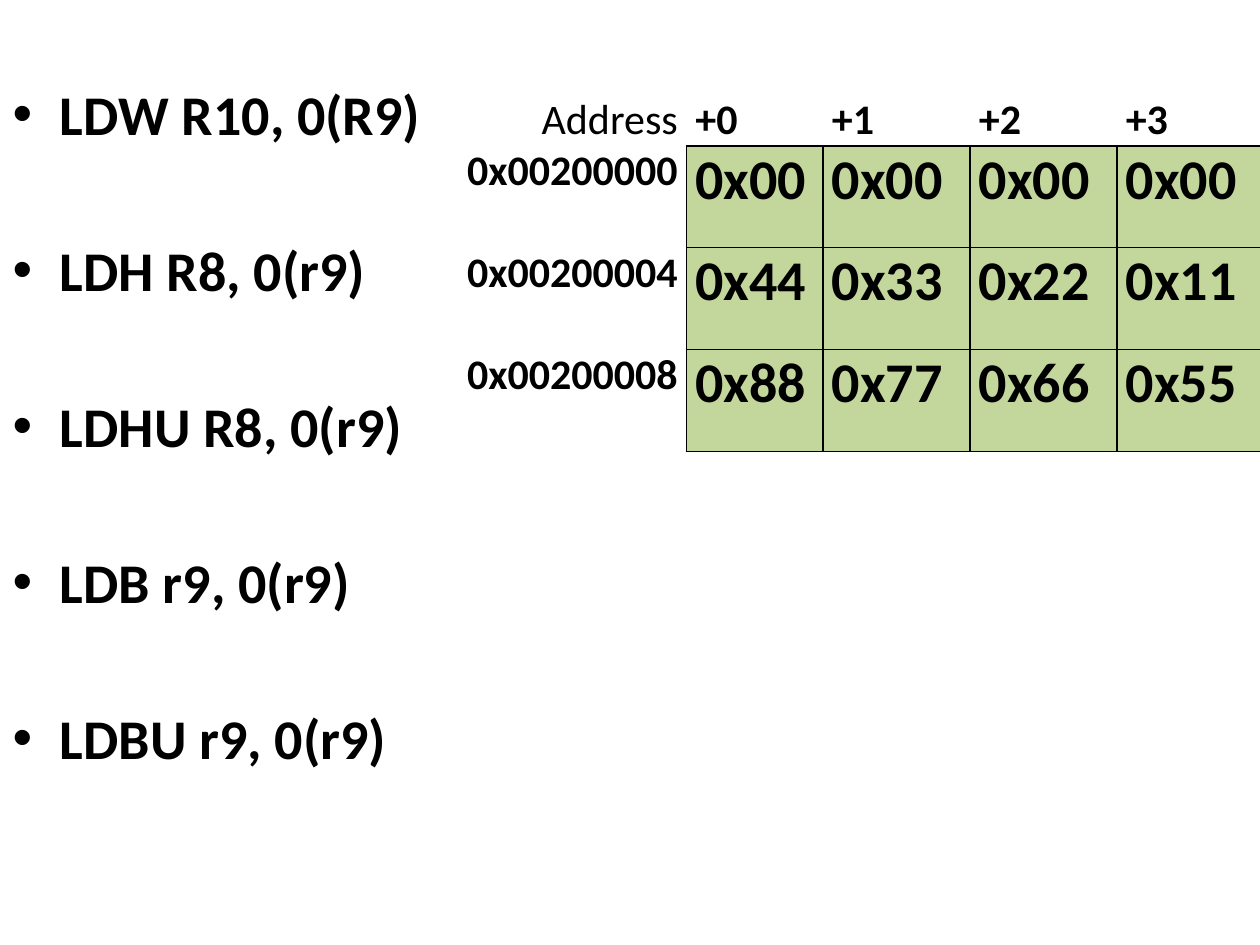
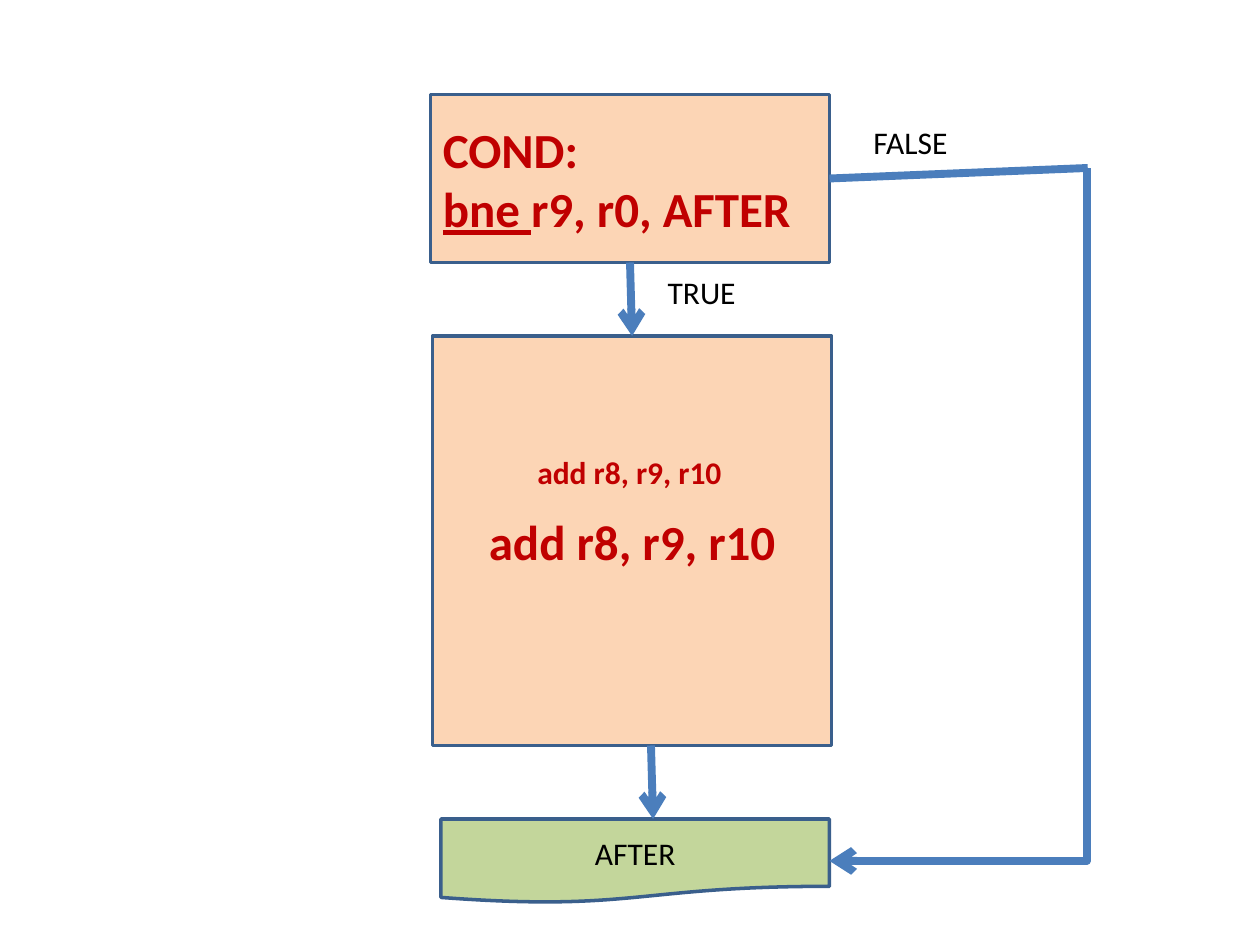
from lxml.etree import SubElement as Sub
from pptx import Presentation
from pptx.dml.color import RGBColor
from pptx.enum.shapes import MSO_CONNECTOR as Link, MSO_SHAPE as Form
from pptx.enum.text import MSO_ANCHOR as Anchor, MSO_AUTO_SIZE as Fit, PP_ALIGN as Align
from pptx.oxml.ns import qn
from pptx.util import Emu, Inches, Pt

COLS, ROWS = 120, 90
BLACK, RED, PEACH, GREEN = "000000", "C00000", "FCD5B5", "C3D69B"
EDGE, BLUE = "3A5F8C", "4B7EBC"


def hue(code):
    return RGBColor.from_string(code)


class Deck:
    """Holds the style and the current slide, measured on a 120 by 90 grid."""

    def __init__(self):
        self.prs = Presentation()
        self.prs.slide_width, self.prs.slide_height = Inches(10), Inches(7.5)
        self.slide = None

    def new(self, layout):
        self.slide = self.prs.slides.add_slide(self.prs.slide_layouts[layout])

    def grid(self, *spots):
        units = self.prs.slide_width / COLS, self.prs.slide_height / ROWS
        return [Emu(round(spot * units[i % 2])) for i, spot in enumerate(spots)]

    def style(self, para, size, color=BLACK, bold=False, align=Align.LEFT):
        para.alignment = align
        font = para.font
        font.name, font.size, font.bold = "Calibri", Pt(size), bold
        font.color.rgb = hue(color)

    def bullets(self, box, lines, size, gap):
        title, body = self.slide.shapes.title, self.slide.placeholders[1]
        title.element.getparent().remove(title.element)
        body.left, body.top, body.width, body.height = self.grid(*box)
        frame = body.text_frame
        frame.text = "\n".join(lines)
        frame.auto_size = Fit.NONE
        for para in frame.paragraphs:
            self.style(para, size, bold=True)
            para.space_before, para.space_after = Pt(0), Pt(gap)
        self.slide.shapes._spTree.append(body.element)

    def rule(self, cell, sides):
        props = cell._tc.get_or_add_tcPr()
        for side in "LRTB":
            line = Sub(props, qn(f"a:ln{side}"), w=str(Pt(1)))
            if side in sides:
                Sub(Sub(line, qn("a:solidFill")), qn("a:srgbClr"), val=BLACK)
            else:
                Sub(line, qn("a:noFill"))

    def table(self, spot, wide, high, data):
        box = self.grid(*spot, sum(wide), sum(high))
        table = self.slide.shapes.add_table(len(high), len(wide), *box).table
        table.first_row = table.horz_banding = False
        for col, span in zip(table.columns, wide):
            col.width = self.grid(span)[0]
        for row, span in zip(table.rows, high):
            row.height = self.grid(0, span)[1]
        for r, line in enumerate(data):
            for c, text in enumerate(line):
                self.cell(table.cell(r, c), text, r, c)

    def cell(self, cell, text, r, c):
        cell.text = text
        cell.margin_left = cell.margin_right = Inches(0.07)
        cell.margin_top = cell.margin_bottom = 0
        inner = r > 0 and c > 0
        self.style(cell.text_frame.paragraphs[0], 32 if inner else 24,
                   bold=r + c > 0, align=Align.LEFT if c else Align.RIGHT)
        self.rule(cell, "LRTB" if inner else "R" if r else "B" if c else "")
        if inner:
            cell.fill.solid()
            cell.fill.fore_color.rgb = hue(GREEN)
        else:
            cell.fill.background()

    def block(self, form, box, fill, text, **look):
        shape = self.slide.shapes.add_shape(form, *self.grid(*box))
        shape.shadow.inherit = False
        shape.fill.solid()
        shape.fill.fore_color.rgb = hue(fill)
        shape.line.color.rgb, shape.line.width = hue(EDGE), Pt(2)
        frame = shape.text_frame
        frame.text, frame.vertical_anchor = text, Anchor.MIDDLE
        for para in frame.paragraphs:
            self.style(para, **look)
        return frame

    def label(self, box, text, **look):
        frame = self.slide.shapes.add_textbox(*self.grid(*box)).text_frame
        frame.text, frame.word_wrap = text, False
        self.style(frame.paragraphs[0], 18, **look)

    def link(self, ends, tip=None, bend=None):
        kind = Link.ELBOW if bend else Link.STRAIGHT
        wire = self.slide.shapes.add_connector(kind, *self.grid(*ends))
        wire.line.color.rgb, wire.line.width = hue(BLUE), Pt(4.5)
        props = wire._element.spPr
        if bend:
            Sub(props.find(qn("a:prstGeom")).find(qn("a:avLst")), qn("a:gd"),
                name="adj1", fmla=f"val {bend}")
        if tip:
            Sub(props.find(qn("a:ln")), qn(f"a:{tip}"), type="arrow")
        Sub(props, qn("a:effectLst"))


def loads(deck):
    deck.new(1)
    deck.table((22.4, 9), (43, 13, 14, 14, 14), (4.8, 9.7, 9.7, 9.7), (
        ("Address", "+0", "+1", "+2", "+3"),
        ("0x00200000", "0x00", "0x00", "0x00", "0x00"),
        ("0x00200004", "0x44", "0x33", "0x22", "0x11"),
        ("0x00200008", "0x88", "0x77", "0x66", "0x55")))
    deck.bullets((0, 7, COLS, ROWS - 7), (
        "LDW R10, 0(R9)", "LDH R8, 0(r9)", "LDHU R8, 0(r9)",
        "LDB r9, 0(r9)", "LDBU r9, 0(r9)"), 32, 50.7)


def branch(deck):
    deck.new(6)
    code = dict(color=RED, bold=True)
    cond = deck.block(Form.RECTANGLE, (41, 9, 38, 16), PEACH, "COND:\nbne ", size=28, **code)
    test = cond.paragraphs[1]
    test.runs[0].font.underline = True
    test.add_run().text = "r9, r0, AFTER"
    deck.block(Form.RECTANGLE, (41.2, 32, 38, 39), PEACH, "add r8, r9, r10",
               size=28, align=Align.CENTER, **code)
    deck.block(Form.FLOWCHART_DOCUMENT, (42, 78, 37, 8), GREEN, "AFTER",
               size=18, align=Align.CENTER)
    deck.link((60, 25, 60.2, 32), "tailEnd")
    deck.link((79, 82, 103.5, 16), "headEnd", bend=100000)
    deck.link((79, 17, 103.6, 16))
    deck.link((62, 71, 62.2, 78), "tailEnd")
    deck.label((62.4, 25.4, 9, 4.8), "TRUE")
    deck.label((82, 11.1, 9.5, 4.8), "FALSE")
    deck.label((50, 42.6, 20.2, 4.8), "add r8, r9, r10", **code)


def main():
    deck = Deck()
    loads(deck)
    branch(deck)
    deck.prs.save("out.pptx")


if __name__ == "__main__":
    main()
